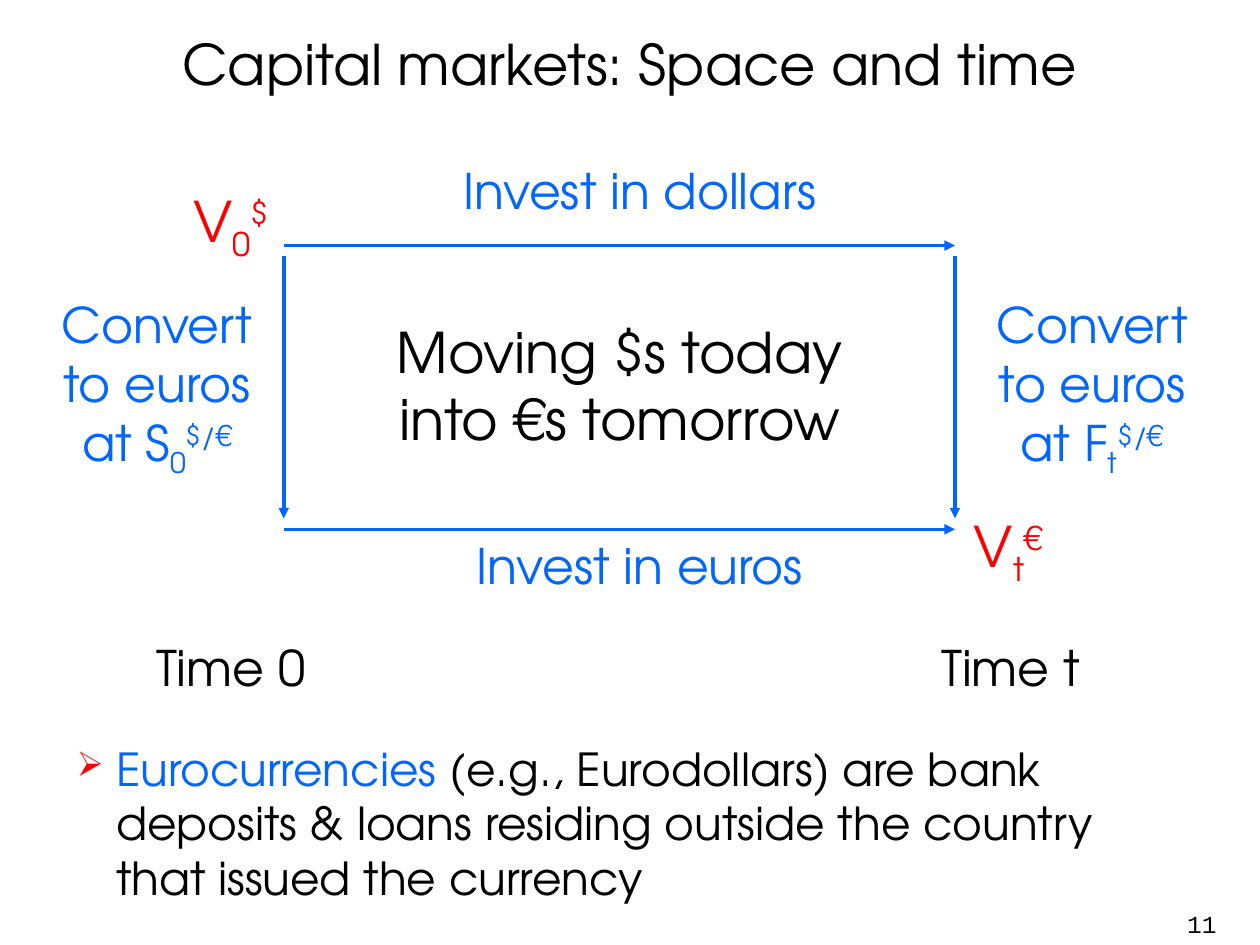
import pptx
import pptx.dml.color
import pptx.enum.shapes
import pptx.enum.text
import pptx.oxml.ns
import pptx.util
from lxml import etree

Cm = pptx.util.Cm
Pt = pptx.util.Pt
ALIGN = pptx.enum.text.PP_ALIGN
ANCHOR = pptx.enum.text.MSO_ANCHOR
qn = pptx.oxml.ns.qn

FONT = "TeX Gyre Adventor"
BLUE, RED, BLACK, WHITE = "0066FF", "FF0000", "000000", "FFFFFF"
SUB, SUPER = -25, 30


def rgb(value):
    return pptx.dml.color.RGBColor.from_string(value)


def add_run(p, text, size, color, font=FONT, base=0):
    """Add a run; base is the baseline shift in percent."""
    r = p.add_run()
    r.text = text
    r.font.size = Pt(size)
    r.font.name = font
    r.font.color.rgb = rgb(color)
    if base:
        r.font._element.set("baseline", str(base * 1000))


def place(sp, left, top, width, height):
    sp.left, sp.top, sp.width, sp.height = (Cm(v) for v in (left, top, width, height))


def add_title(s, text):
    sp = s.shapes.title
    place(sp, 0, 0, 25.4, 2.54)
    sp.text_frame.vertical_anchor = ANCHOR.MIDDLE
    p = sp.text_frame.paragraphs[0]
    p.alignment = ALIGN.CENTER
    add_run(p, text, 32, BLACK)


def add_box(s, left, top, width, height, align=ALIGN.CENTER, anchor=ANCHOR.TOP):
    """Add a wrapping text box and return its first paragraph."""
    sp = s.shapes.add_textbox(Cm(left), Cm(top), Cm(width), Cm(height))
    tf = sp.text_frame
    tf.word_wrap = True
    tf.vertical_anchor = anchor
    p = tf.paragraphs[0]
    p.alignment = align
    return p


def add_label(s, left, top, width, height, text, size, color, font=FONT):
    add_run(add_box(s, left, top, width, height), text, size, color, font)


def add_symbol(s, left, top, width, height, text, sub, sup, size, color, anchor):
    """Add text that ends in a subscript and a superscript."""
    p = add_box(s, left, top, width, height, anchor=anchor)
    add_run(p, text, size, color)
    add_run(p, sub, size, color, base=SUB)
    add_run(p, sup, size, color, base=SUPER)


def add_center_panel(s, text):
    sp = s.shapes.add_shape(pptx.enum.shapes.MSO_SHAPE.RECTANGLE,
                            Cm(6.78), Cm(6.27), Cm(11.43), Cm(3.96))
    sp.shadow.inherit = False
    sp.fill.solid()
    sp.fill.fore_color.rgb = rgb(WHITE)
    sp.line.fill.background()
    sp.text_frame.word_wrap = True
    sp.text_frame.vertical_anchor = ANCHOR.TOP
    p = sp.text_frame.paragraphs[0]
    p.alignment = ALIGN.CENTER
    add_run(p, text, 32, BLACK)


def add_arrow(s, x1, y1, x2, y2):
    cx = s.shapes.add_connector(pptx.enum.shapes.MSO_CONNECTOR.STRAIGHT,
                                Cm(x1), Cm(y1), Cm(x2), Cm(y2))
    cx.line.color.rgb = rgb(BLUE)
    cx.line.width = Pt(2)
    etree.SubElement(cx.line._get_or_add_ln(), qn("a:tailEnd"), type="triangle")
    etree.SubElement(cx._element.spPr, qn("a:effectLst"))


def add_time_axis(s):
    p = add_box(s, 2.34, 12.73, 20.52, 1.45, align=ALIGN.LEFT)
    tabs = etree.SubElement(p._p.get_or_add_pPr(), qn("a:tabLst"))
    for pos in (2.06, 17.78):
        etree.SubElement(tabs, qn("a:tab"), pos=str(Cm(pos)), algn="ctr")
    add_run(p, "\tTime 0\tTime t", 28, BLACK)


def add_definition(s, term, rest):
    p = add_box(s, 1.3, 14.81, 23.04, 3.73, align=ALIGN.LEFT)
    pPr = p._p.get_or_add_pPr()
    pPr.set("marL", str(Cm(0.79)))
    pPr.set("indent", str(-Cm(0.79)))
    color = etree.SubElement(pPr, qn("a:buClr"))
    etree.SubElement(color, qn("a:srgbClr"), val=RED)
    etree.SubElement(pPr, qn("a:buSzPct"), val="75000")
    etree.SubElement(pPr, qn("a:buChar"), char="➢")
    add_run(p, term, 26, BLUE)
    add_run(p, rest, 26, BLACK)


def main():
    prs = pptx.Presentation()
    prs.slide_width, prs.slide_height = Cm(25.4), Cm(19.05)
    s = prs.slides.add_slide(prs.slide_layouts[5])

    add_title(s, "Capital markets: Space and time")
    add_center_panel(s, "Moving $s today into €s tomorrow")

    left, right, top, bottom, gap = 5.72, 19.25, 4.95, 10.67, 0.22
    for y in (top, bottom):
        add_arrow(s, left, y, right, y)
    for x in (left, right):
        add_arrow(s, x, top + gap, x, bottom - gap)

    for y, text in ((3.12, "Invest in dollars"), (10.67, "Invest in euros")):
        add_label(s, 2.74, y, 20.32, 1.6, text, 28, BLUE)
    for x, rate, time in ((0.84, "S", "0"), (19.69, "F", "t")):
        add_symbol(s, x, 5.82, 4.65, 3.81, "Convert to euros at " + rate,
                   time, "$/€", 28, BLUE, ANCHOR.TOP)
    for x, y, time, currency in ((3.38, 3.48, "0", "$"), (19.05, 10.03, "t", "€")):
        add_symbol(s, x, y, 2.54, 2.11, "V", time, currency, 32, RED, ANCHOR.MIDDLE)

    add_time_axis(s)
    add_definition(s, "Eurocurrencies",
                   " (e.g., Eurodollars) are bank deposits & loans residing "
                   "outside the country that issued the currency")
    add_label(s, 23.06, 18.21, 2.34, 0.84, "11", 14, BLACK, "Courier New")
    prs.save("out.pptx")


if __name__ == "__main__":
    main()
